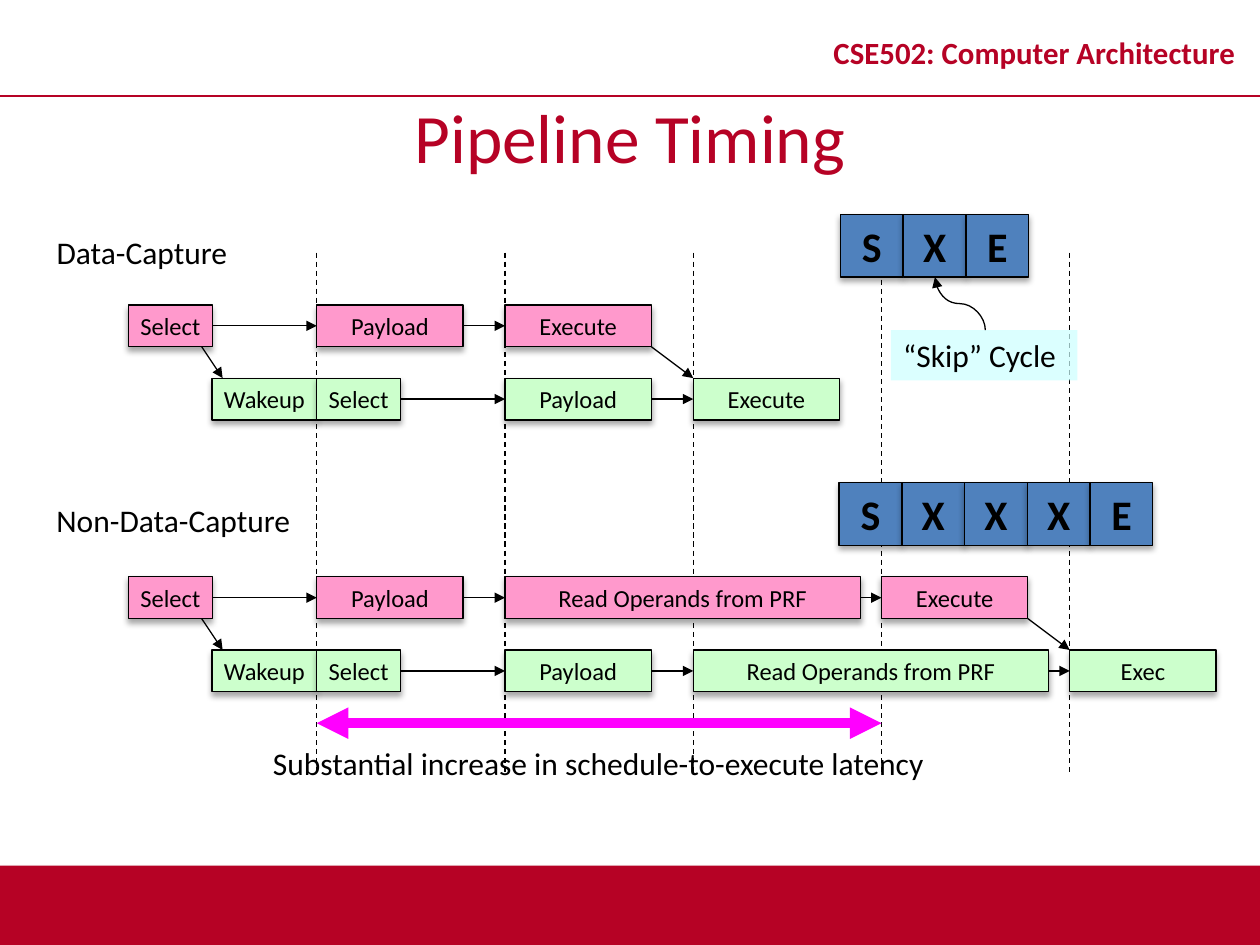
from lxml import etree
from pptx import Presentation
from pptx import util as u
from pptx.dml import color
from pptx.enum import dml, shapes, text
from pptx.oxml import ns

BLACK, RED, PINK, GREEN, BLUE = "000000", "B60225", "FF99CC", "CCFFCC", "4F81BD"
LEFT, TOP, UNIT = 1.02, 2.42, 0.166  # grid origin and pitch, inches
CYCLE = 9  # grid columns in one clock cycle
ROW_STEP, BAND_STEP, BOX_ROWS = 3.5, 13, 2
rgb = color.RGBColor.from_string

deck = Presentation()
deck.slide_width, deck.slide_height = u.Inches(10), u.Inches(7.5)
page = deck.slides.add_slide(deck.slide_layouts[6])


def add_box(words, x, y, width, height, size=14, fill=None, line=None, ink=BLACK, bold=False,
            align="CENTER", wrap=False, anchor="MIDDLE", shadow=None, alpha=None, spacing=None):
    """Add a text box, or a rectangle when a fill is given; shadow is (blur, distance) in points."""
    place = [u.Inches(value) for value in (x, y, width, height)]
    if fill:
        box = page.shapes.add_shape(shapes.MSO_SHAPE.RECTANGLE, *place)
        box.fill.solid()
        box.fill.fore_color.rgb = rgb(fill)
        box.shadow.inherit = False
        if line:
            box.line.color.rgb, box.line.width = rgb(line), u.Pt(0.75)
        else:
            box.line.fill.background()
    else:
        box = page.shapes.add_textbox(*place)
    if alpha:
        tint = box._element.spPr.find(".//" + ns.qn("a:srgbClr"))
        etree.SubElement(tint, ns.qn("a:alpha"), val=str(alpha * 1000))
    if shadow:
        effects = box._element.spPr.find(ns.qn("a:effectLst"))
        outer = etree.SubElement(effects, ns.qn("a:outerShdw"), blurRad=str(u.Pt(shadow[0])),
                                 dist=str(u.Pt(shadow[1])), dir="5400000", rotWithShape="0")
        shade = etree.SubElement(outer, ns.qn("a:srgbClr"), val=BLACK)
        etree.SubElement(shade, ns.qn("a:alpha"), val="35000")
    if words:
        frame = box.text_frame
        frame.word_wrap = wrap
        frame.vertical_anchor = text.MSO_ANCHOR[anchor]
        para = frame.paragraphs[0]
        para.alignment = text.PP_ALIGN[align]
        if spacing:
            para.line_spacing = spacing
        span = para.add_run()
        span.text = words
        span.font.name, span.font.size, span.font.bold = "Calibri", u.Pt(size), bold
        span.font.color.rgb = rgb(ink)
    return box


def add_line(start, end, ink=BLACK, width=0.75, dash=False, ends=("tailEnd",), kind="STRAIGHT"):
    line = page.shapes.add_connector(shapes.MSO_CONNECTOR[kind],
                                     *[u.Inches(value) for value in (*start, *end)])
    line.line.color.rgb, line.line.width = rgb(ink), u.Pt(width)
    if dash:
        line.line.dash_style = dml.MSO_LINE.DASH
    for name in ends:
        etree.SubElement(line.line._get_or_add_ln(), ns.qn("a:" + name), type="triangle")
    etree.SubElement(line._element.spPr, ns.qn("a:effectLst"))
    return line


# Header, title and footer
add_box("", 0, 6.87, 10, 0.63, fill=RED, shadow=(3.1, 1.8))
add_line((0, 0.76), (10, 0.76), ink=RED, width=1, ends=())
add_box("CSE502: Computer Architecture", 6.42, 0.13, 3.58, 0.63, size=17.6, ink=RED,
        bold=True, wrap=True, spacing=0.8)
add_box("Pipeline Timing", 0, 0.76, 10, 0.63, size=39.6, ink=RED, wrap=True)

# Clock cycle boundaries
for cycle in range(1, 6):
    x = LEFT + cycle * CYCLE * UNIT
    add_line((x, TOP - 2.5 * UNIT), (x, TOP + 22.5 * UNIT), dash=True, ends=())

# Each pipeline: two rows of (label, grid column, columns wide), then the column where
# the first instruction's result is ready
READ = "Read Operands from PRF"
pipelines = [
    ([("Select", 0, 4), ("Payload", 9, 7), ("Execute", 18, 7)],
     [("Wakeup", 4, 5), ("Select", 9, 4), ("Payload", 18, 7), ("Execute", 27, 7)], 25),
    ([("Select", 0, 4), ("Payload", 9, 7), (READ, 18, 17), ("Execute", 36, 7)],
     [("Wakeup", 4, 5), ("Select", 9, 4), ("Payload", 18, 7), (READ, 27, 17), ("Exec", 45, 7)], 43),
]
for band, (first, second, ready) in enumerate(pipelines):
    top = TOP + band * BAND_STEP * UNIT
    for row, (stages, fill) in enumerate([(first, PINK), (second, GREEN)]):
        y = top + row * ROW_STEP * UNIT
        previous, previous_end = None, 0
        for label, column, columns in stages:
            box = add_box(label, LEFT + column * UNIT, y, columns * UNIT, BOX_ROWS * UNIT,
                          fill=fill, line=BLACK, shadow=(3.5, 2.2))
            if previous is not None and column > previous_end:
                arrow = add_line((LEFT + previous_end * UNIT, y + UNIT),
                                 (LEFT + column * UNIT, y + UNIT))
                arrow.begin_connect(previous, 3)
                arrow.end_connect(box, 1)
            previous, previous_end = box, column + columns
    for start, end in [(3.5, 4.5), (ready, ready + 2)]:
        add_line((LEFT + start * UNIT, top + BOX_ROWS * UNIT),
                 (LEFT + end * UNIT, top + ROW_STEP * UNIT))

# Stage summaries
for stages, x, y in [("SXXXE", 6.66, 3.83), ("SXE", 6.67, 1.7)]:
    for index, stage in enumerate(stages):
        add_box(stage, x + index * 3 * UNIT, y, 3 * UNIT, 3 * UNIT, size=24, fill=BLUE,
                line=BLACK, bold=True, shadow=(3.5, 2.2))

# Skipped cycle callout
add_box("“Skip” Cycle", 7.07, 2.62, 1.48, 0.4, size=18, fill="CCFFFF", alpha=70,
        align="LEFT", anchor="TOP")
curve = add_line((7.41, 2.61), (7.83, 2.21), kind="CURVE")
curve._element.spPr.xfrm.set("rot", "16200000")

# Latency span and labels
y = TOP + 20 * UNIT
add_line((LEFT + CYCLE * UNIT, y), (LEFT + 4 * CYCLE * UNIT, y), ink="FF00FF", width=6,
         ends=("headEnd", "tailEnd"))
for words, x, y, width, align in [
    ("Substantial increase in schedule-to-execute latency", 2.03, 5.86, 5.44, "CENTER"),
    ("Data-Capture", 0.35, 1.8, 1.61, "LEFT"),
    ("Non-Data-Capture", 0.35, 3.93, 2.14, "LEFT"),
]:
    add_box(words, x, y, width, 0.4, size=18, align=align, anchor="TOP")

deck.save("out.pptx")
